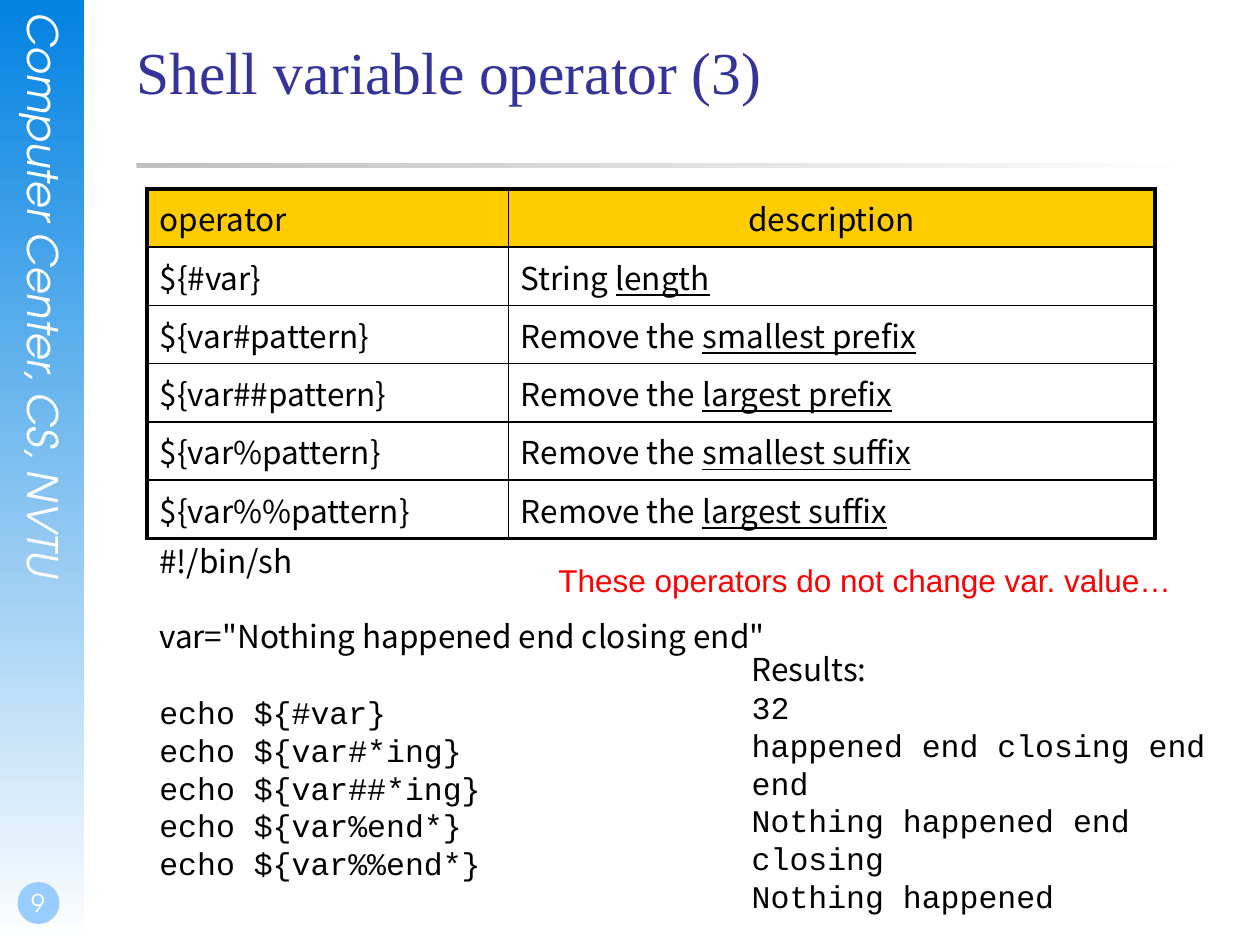
from dataclasses import dataclass, field
from typing import Any

from lxml.etree import SubElement
from pptx import Presentation
from pptx.dml.color import RGBColor
from pptx.enum.shapes import MSO_SHAPE as Shape
from pptx.enum.text import MSO_ANCHOR as Anchor, PP_ALIGN as Align
from pptx.oxml.ns import qn
from pptx.util import Pt

BLACK = RGBColor(0x00, 0x00, 0x00)
WHITE = RGBColor(0xFF, 0xFF, 0xFF)
BLUE = RGBColor(0x02, 0x82, 0xE2)
BADGE = RGBColor(0x99, 0xCC, 0xFF)
SILVER = RGBColor(0xC0, 0xC0, 0xC0)
NAVY = RGBColor(0x33, 0x33, 0x99)
GOLD = RGBColor(0xFF, 0xCC, 0x00)
RED = RGBColor(0xFF, 0x00, 0x00)

SANS, MONO, DECO = "Noto Sans CJK SC", "Courier New", "TeX Gyre Adventor"
CODE_LINE = 21.6


@dataclass
class Line:
    text: str
    font: dict[str, Any]
    color: RGBColor = BLACK
    fmt: dict[str, Any] = field(default_factory=dict)
    underlined: str = ""


@dataclass
class Box:
    left: float
    top: float
    width: float
    height: float
    lines: list[Line]
    margins: tuple[float, float, float, float] = (7.2, 3.6, 7.2, 3.6)
    frame: dict[str, Any] = field(default_factory=dict)
    vert: str = "horz"


@dataclass
class Block:
    shape: Shape
    left: float
    top: float
    width: float
    height: float
    colors: tuple[RGBColor, ...]
    angle: float = 0


def set_all(target: Any, values: dict[str, Any]) -> None:
    for name, value in values.items():
        setattr(target, name, value)


def add_run(p: Any, text: str, line: Line, underline: bool = False) -> None:
    r = p.add_run()
    r.text = text
    set_all(r.font, {**line.font, "underline": underline})
    r.font.color.rgb = line.color


def write_lines(tf: Any, lines: list[Line]) -> None:
    for i, line in enumerate(lines):
        p = tf.add_paragraph() if i else tf.paragraphs[0]
        set_all(p, line.fmt)
        add_run(p, line.text, line)
        if line.underlined:
            add_run(p, line.underlined, line, True)


def draw_box(s: Any, box: Box) -> None:
    sp = s.shapes.add_textbox(Pt(box.left), Pt(box.top), Pt(box.width), Pt(box.height))
    tf = sp.text_frame
    sides = ("margin_left", "margin_top", "margin_right", "margin_bottom")
    margins = {side: Pt(m) for side, m in zip(sides, box.margins)}
    set_all(tf, {"word_wrap": True, **margins, **box.frame})
    tf._txBody.bodyPr.set("vert", box.vert)
    write_lines(tf, box.lines)


def draw_block(s: Any, block: Block) -> None:
    sp = s.shapes.add_shape(block.shape, Pt(block.left), Pt(block.top),
                            Pt(block.width), Pt(block.height))
    sp.shadow.inherit = False
    sp.line.fill.background()
    if len(block.colors) == 1:
        sp.fill.solid()
        sp.fill.fore_color.rgb = block.colors[0]
        return
    sp.fill.gradient()
    sp.fill.gradient_angle = block.angle
    for stop, color in zip(sp.fill.gradient_stops, block.colors):
        stop.color.rgb = color


def add_border(cell: Any, side: str, width: float) -> None:
    ln = SubElement(cell._tc.get_or_add_tcPr(), qn(f"a:ln{side}"), w=str(Pt(width)))
    fill = SubElement(ln, qn("a:solidFill"))
    SubElement(fill, qn("a:srgbClr"), val=str(BLACK))


def draw_table(s: Any, left: float, top: float, widths: list[float],
               row_height: float, rows: list[tuple[Line, Line]]) -> None:
    last_row, last_col = len(rows) - 1, len(widths) - 1
    table = s.shapes.add_table(len(rows), len(widths), Pt(left), Pt(top),
                               Pt(sum(widths)), Pt(row_height * len(rows))).table
    set_all(table, {"first_row": False, "horz_banding": False})
    for col, width in zip(table.columns, widths):
        col.width = Pt(width)
    for i, row in enumerate(rows):
        table.rows[i].height = Pt(row_height)
        for j, line in enumerate(row):
            cell = table.cell(i, j)
            write_lines(cell.text_frame, [line])
            outer = {"L": j == 0, "R": j == last_col, "T": i == 0, "B": i == last_row}
            for side, is_outer in outer.items():
                add_border(cell, side, 2.25 if is_outer else 1)
            cell.fill.solid()
            cell.fill.fore_color.rgb = WHITE if i else GOLD


def font(name: str, size: float, **extra: Any) -> dict[str, Any]:
    return {"name": name, "size": Pt(size), **extra}


def code(text: str, name: str = MONO, gap: bool = False) -> Line:
    fmt = {"line_spacing": Pt(CODE_LINE), "space_before": Pt(CODE_LINE if gap else 0)}
    return Line(text, font(name, 18), fmt=fmt)


BODY = font(SANS, 18)
OPERATORS = [
    ("${#var}", "String ", "length"),
    ("${var#pattern}", "Remove the ", "smallest prefix"),
    ("${var##pattern}", "Remove the ", "largest prefix"),
    ("${var%pattern}", "Remove the ", "smallest suffix"),
    ("${var%%pattern}", "Remove the ", "largest suffix"),
]
ROWS = [(Line("operator", BODY), Line("description", BODY, fmt={"alignment": Align.CENTER}))]
ROWS += [(Line(op, BODY), Line(verb, BODY, underlined=what)) for op, verb, what in OPERATORS]

SCRIPT = [
    code("#!/bin/sh", SANS),
    code('var="Nothing happened end closing end"', SANS, gap=True),
    code("echo ${#var}", gap=True),
    *map(code, ("echo ${var#*ing}", "echo ${var##*ing}",
                "echo ${var%end*}", "echo ${var%%end*}")),
]
RESULTS = [
    code("Results:", SANS),
    *map(code, ("32", "happened end closing end", "end",
                "Nothing happened end closing", "Nothing happened")),
]

BLOCKS = [
    Block(Shape.RECTANGLE, 0, 0, 48, 540, (BLUE, WHITE), 270),
    Block(Shape.OVAL, 10, 504, 24, 24, (BADGE,)),
    Block(Shape.RECTANGLE, 78, 93, 612, 3, (SILVER, WHITE)),
]
NO_MARGINS = (0, 0, 0, 0)
BOXES = [
    Box(11, 7.2, 29, 368, [Line("Computer Center, CS, NVTU", font(DECO, 24, italic=True), WHITE)],
        NO_MARGINS, vert="eaVert"),
    Box(0, 492, 42, 36, [Line("9", font(DECO, 14), WHITE, {"alignment": Align.CENTER})],
        (1.4, 0, 0, 3.6), {"vertical_anchor": Anchor.BOTTOM}),
    Box(78, 20, 612, 90, [Line("Shell variable operator (3)", font("Times New Roman", 34), NAVY)],
        NO_MARGINS),
    Box(84, 306, 371.5, 204, SCRIPT),
    Box(422.5, 368, 294, 138, RESULTS),
    Box(312, 317, 365, 29,
        [Line("These operators do not change var. value…", font("Arial", 18), RED)],
        frame={"word_wrap": False}),
]


def main() -> None:
    prs = Presentation()
    set_all(prs, {"slide_width": Pt(720), "slide_height": Pt(540)})
    s = prs.slides.add_slide(prs.slide_layouts[6])
    for block in BLOCKS:
        draw_block(s, block)
    draw_table(s, 84, 108, [206.5, 369.5], 33.3, ROWS)
    for box in BOXES:
        draw_box(s, box)
    prs.save("out.pptx")


if __name__ == "__main__":
    main()
